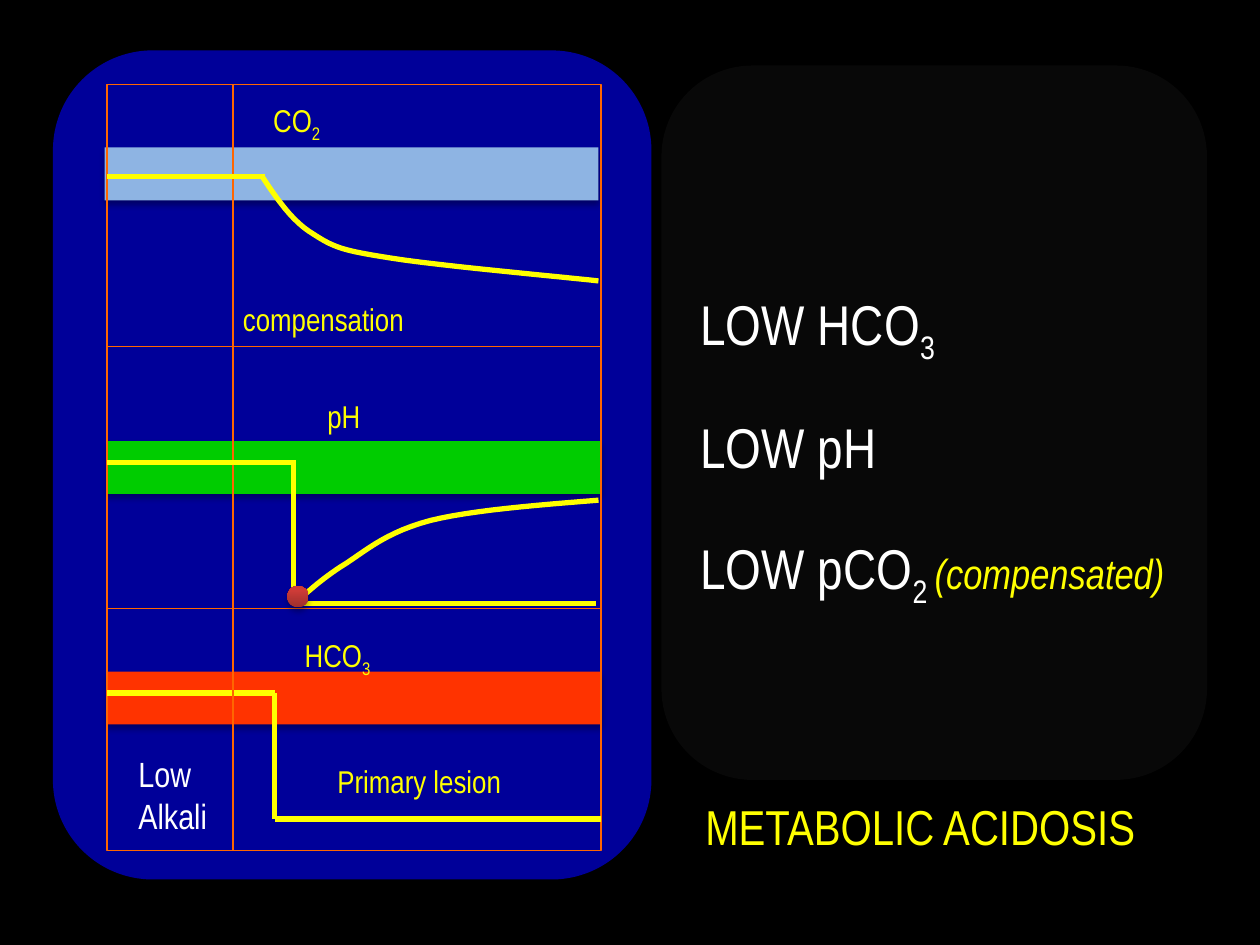
from lxml.etree import SubElement
from pptx import Presentation
from pptx.dml.color import RGBColor
from pptx.enum.shapes import MSO_CONNECTOR, MSO_SHAPE
from pptx.enum.text import MSO_ANCHOR, MSO_AUTO_SIZE, PP_ALIGN
from pptx.oxml.ns import qn
from pptx.util import Inches, Pt

BLACK = RGBColor(0x00, 0x00, 0x00)
WHITE = RGBColor(0xFF, 0xFF, 0xFF)
YELLOW = RGBColor(0xFF, 0xFF, 0x00)
ORANGE = RGBColor(0xFF, 0x66, 0x00)
NAVY = RGBColor(0x00, 0x00, 0x99)
CHARCOAL = RGBColor(0x08, 0x08, 0x08)
LIGHT_BLUE = RGBColor(0x8E, 0xB4, 0xE3)
GREEN = RGBColor(0x00, 0xCC, 0x00)
RED = RGBColor(0xFF, 0x33, 0x00)
DARK_RED = RGBColor(0x9C, 0x2F, 0x2D)
BRIGHT_RED = RGBColor(0xCE, 0x3B, 0x37)

FONT = "Arial Narrow"
LEFT, RIGHT, TOP, BOTTOM = 0.85, 4.77, 0.67, 6.75
CURVE_STEPS = 12

presentation = Presentation()
presentation.slide_width = Inches(10)
presentation.slide_height = Inches(7.5)
slide = presentation.slides.add_slide(presentation.slide_layouts[6])
slide.background.fill.solid()
slide.background.fill.fore_color.rgb = BLACK
shapes = slide.shapes


def add_shadowed_shape(kind, x, y, width, height, color):
    shape = shapes.add_shape(kind, Inches(x), Inches(y), Inches(width), Inches(height))
    shape.fill.solid()
    shape.fill.fore_color.rgb = color
    shape.line.fill.background()
    shape.shadow.inherit = False
    shadow = SubElement(
        shape._element.spPr.find(qn("a:effectLst")), qn("a:outerShdw"),
        blurRad=str(Pt(3.5)), dist=str(Pt(2.2)), dir="5400000", rotWithShape="0",
    )
    shadow_color = SubElement(shadow, qn("a:srgbClr"), val="000000")
    SubElement(shadow_color, qn("a:alpha"), val="32000")
    return shape


def add_paragraphs(text_frame, paragraphs, line_spacing=None):
    """Fill the frame with paragraphs of (text, size, color, style) runs."""
    text_frame.word_wrap = False
    for index, runs in enumerate(paragraphs):
        paragraph = text_frame.add_paragraph() if index else text_frame.paragraphs[0]
        paragraph.alignment = PP_ALIGN.LEFT
        if line_spacing:
            paragraph.line_spacing = line_spacing
        for text, size, color, style in runs:
            run = paragraph.add_run()
            run.text = text
            run.font.name = FONT
            run.font.size = Pt(size)
            run.font.color.rgb = color
            if style == "italic":
                run.font.italic = True
            if style == "subscript":
                run._r.get_or_add_rPr().set("baseline", "-25000")


# Chart panel and normal-range bands
add_shadowed_shape(MSO_SHAPE.ROUNDED_RECTANGLE, 0.42, 0.4, 4.75, 6.58, NAVY)
for x, y, color in [(0.83, 1.17, LIGHT_BLUE), (LEFT, 3.5, GREEN), (LEFT, 5.33, RED)]:
    add_shadowed_shape(MSO_SHAPE.RECTANGLE, x, y, 3.92, 0.42, color)

# Chart frame
frame = shapes.add_shape(
    MSO_SHAPE.RECTANGLE, Inches(LEFT), Inches(TOP),
    Inches(RIGHT - LEFT), Inches(BOTTOM - TOP),
)
frame.fill.background()
frame.line.color.rgb = ORANGE
frame.line.width = Pt(0.75)
frame.shadow.inherit = False

# Dividers and the straight parts of the traces, from back to front
for x1, y1, x2, y2, color, width in [
    (LEFT, 2.75, RIGHT, 2.75, ORANGE, 0.75),
    (LEFT, 4.83, RIGHT, 4.83, ORANGE, 0.75),
    (LEFT, 5.5, 2.18, 5.5, YELLOW, 3),
    (2.18, 5.5, 2.18, 6.5, YELLOW, 3),
    (2.18, 6.5, RIGHT, 6.5, YELLOW, 3),
    (1.85, TOP, 1.85, BOTTOM, ORANGE, 0.75),
    (LEFT, 1.4, 2.1, 1.4, YELLOW, 3),
    (LEFT, 3.67, 2.35, 3.67, YELLOW, 3),
    (2.33, 3.67, 2.33, 4.77, YELLOW, 3),
    (2.32, 4.79, 4.73, 4.79, YELLOW, 3),
]:
    line = shapes.add_connector(
        MSO_CONNECTOR.STRAIGHT, Inches(x1), Inches(y1), Inches(x2), Inches(y2)
    )
    line.line.color.rgb = color
    line.line.width = Pt(width)
    SubElement(line._element.spPr, qn("a:effectLst"))

# Curved parts: a start point, then three points for each cubic Bezier segment
co2_curve = [
    (2.08, 1.4), (2.2, 1.58), (2.32, 1.76), (2.49, 1.86), (2.66, 1.97),
    (2.73, 1.99), (3.11, 2.05), (3.49, 2.11), (4.48, 2.2), (4.75, 2.23),
]
ph_curve = [
    (2.33, 4.8), (2.45, 4.69), (2.57, 4.58), (2.75, 4.47), (2.93, 4.35),
    (3.08, 4.22), (3.42, 4.13), (3.75, 4.05), (4.25, 4.01), (4.75, 3.97),
]
for controls in (co2_curve, ph_curve):
    points = []
    for start in range(0, len(controls) - 1, 3):
        segment = controls[start:start + 4]
        for step in range(1, CURVE_STEPS + 1):
            t = step / CURVE_STEPS
            weights = ((1 - t) ** 3, 3 * t * (1 - t) ** 2, 3 * t ** 2 * (1 - t), t ** 3)
            points.append(tuple(
                Inches(sum(w * point[axis] for w, point in zip(weights, segment)))
                for axis in (0, 1)
            ))
    builder = shapes.build_freeform(Inches(controls[0][0]), Inches(controls[0][1]))
    builder.add_line_segments(points, close=False)
    curve = builder.convert_to_shape()
    curve.fill.background()
    curve.line.color.rgb = YELLOW
    curve.line.width = Pt(3)
    curve.shadow.inherit = False

# Labels
for x, y, width, height, paragraphs in [
    (2.07, 0.75, 0.59, 0.4,
     [[("CO", 18, YELLOW, None), ("2", 18, YELLOW, "subscript")]]),
    (1.83, 2.33, 1.49, 0.4, [[("compensation", 18, YELLOW, None)]]),
    (2.5, 3.1, 0.47, 0.4, [[("pH", 18, YELLOW, None)]]),
    (2.32, 5, 0.78, 0.4,
     [[("HCO", 18, YELLOW, None), ("3", 18, YELLOW, "subscript")]]),
    (2.58, 6, 1.51, 0.4, [[("Primary lesion", 18, YELLOW, None)]]),
    (1, 5.92, 0.75, 0.77,
     [[("Low", 20, WHITE, None)], [("Alkali", 20, WHITE, None)]]),
    (5.5, 6.27, 3.66, 0.57, [[("METABOLIC ACIDOSIS", 28, YELLOW, None)]]),
]:
    label = shapes.add_textbox(Inches(x), Inches(y), Inches(width), Inches(height))
    label.text_frame.auto_size = MSO_AUTO_SIZE.SHAPE_TO_FIT_TEXT
    add_paragraphs(label.text_frame, paragraphs)

# Findings panel
findings = add_shadowed_shape(
    MSO_SHAPE.ROUNDED_RECTANGLE, 5.25, 0.52, 4.33, 5.67, CHARCOAL
)
findings.text_frame.vertical_anchor = MSO_ANCHOR.MIDDLE
add_paragraphs(findings.text_frame, [
    [("LOW HCO", 32, WHITE, None), ("3", 32, WHITE, "subscript")],
    [("LOW pH", 32, WHITE, None)],
    [("LOW pCO", 32, WHITE, None), ("2 ", 32, WHITE, "subscript"),
     ("(compensated)", 24, YELLOW, "italic")],
], line_spacing=1.7)

# Marker at the lowest pH
marker = add_shadowed_shape(MSO_SHAPE.OVAL, 2.28, 4.65, 0.17, 0.17, DARK_RED)
marker.fill.gradient()
marker.fill.gradient_angle = 90
for stop, position, color in zip(
    marker.fill.gradient_stops, (0, 0.8), (DARK_RED, BRIGHT_RED)
):
    stop.position = position
    stop.color.rgb = color

presentation.save("out.pptx")
